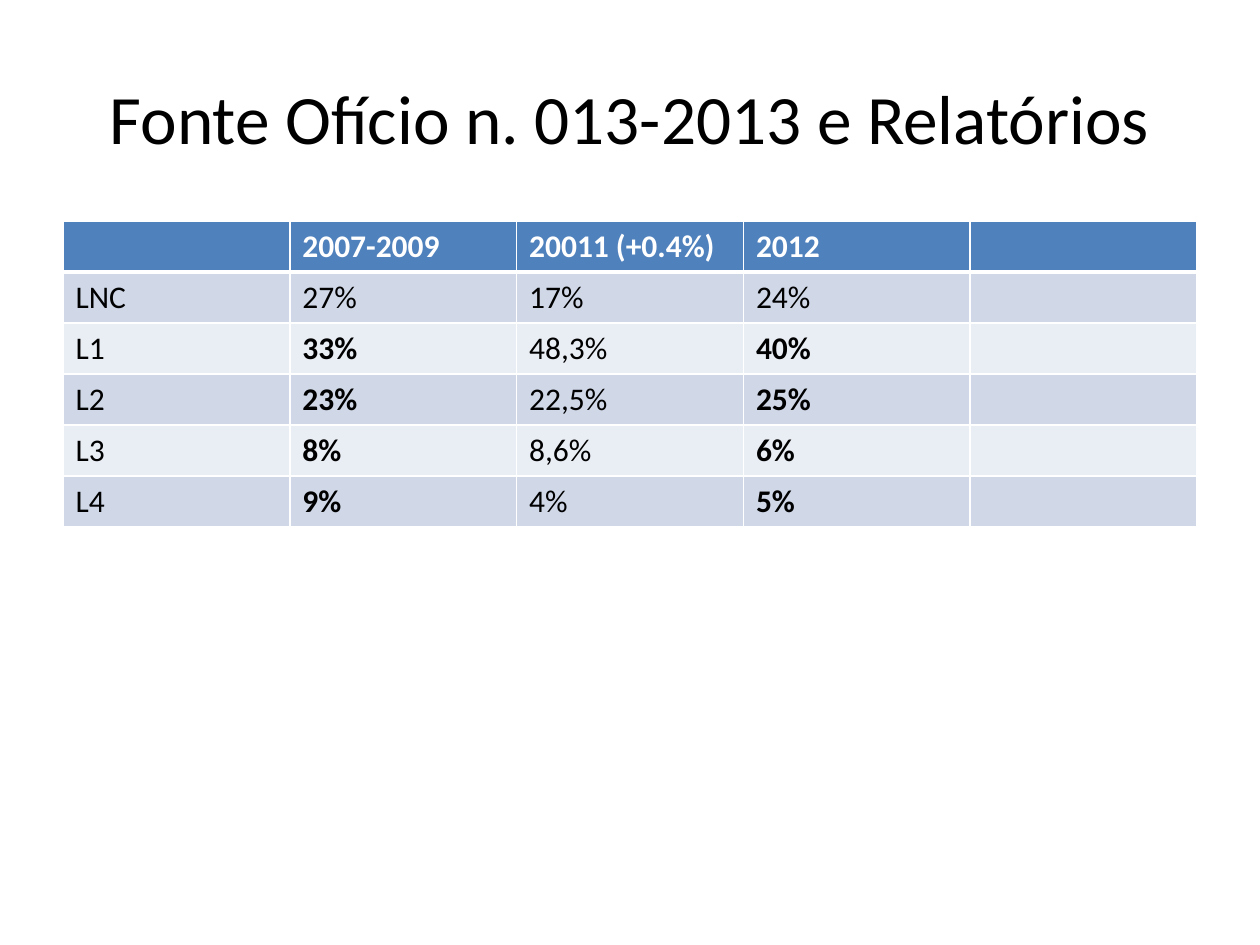
from dataclasses import dataclass

from lxml.etree import SubElement
from pptx import Presentation
from pptx.dml.color import RGBColor as RGB
from pptx.enum.text import MSO_ANCHOR as Anchor, PP_ALIGN as Align
from pptx.oxml.ns import qn
from pptx.util import Pt

EMU_PER_PX = 914400 / 126


@dataclass(frozen=True)
class Theme:
    font: str = "Calibri"
    title_size: float = 39.6
    cell_size: int = 18
    ink: str = "000000"
    white: str = "FFFFFF"
    header: str = "4F81BD"
    bands: tuple = ("D0D8E8", "E9EDF4")
    rule: int = 1
    header_rule: int = 3


theme = Theme()


def px(count):
    return round(count * EMU_PER_PX)


def style_runs(para, size, color, bold=False):
    for span in para.runs:
        span.font.name = theme.font
        span.font.size = Pt(size)
        span.font.bold = bold
        span.font.color.rgb = RGB.from_string(color)


deck = Presentation()
deck.slide_width, deck.slide_height = px(1260), px(945)
page = deck.slides.add_slide(deck.slide_layouts[6])

# Title
title = page.shapes.add_textbox(px(63), px(38), px(1134), px(157)).text_frame
title.word_wrap = True
title.vertical_anchor = Anchor.MIDDLE
title.text = "Fonte Ofício n. 013-2013 e Relatórios"
title.paragraphs[0].alignment = Align.CENTER
style_runs(title.paragraphs[0], theme.title_size, theme.ink)

# Percentages by level and period; the last column is empty
rows = [
    ("", "2007-2009", "20011 (+0.4%)", "2012", ""),
    ("LNC", "27%", "17%", "24%", ""),
    ("L1", "33%", "48,3%", "40%", ""),
    ("L2", "23%", "22,5%", "25%", ""),
    ("L3", "8%", "8,6%", "6%", ""),
    ("L4", "9%", "4%", "5%", ""),
]
bold_columns = (1, 3)
row_height = 51

table = page.shapes.add_table(
    len(rows), len(rows[0]), px(63), px(221), px(1134), px(row_height * len(rows))
).table

for r, values in enumerate(rows):
    table.rows[r].height = px(row_height)
    is_header = r == 0
    fill = theme.header if is_header else theme.bands[(r - 1) % 2]
    color = theme.white if is_header else theme.ink
    widths = {
        "a:lnL": theme.rule,
        "a:lnR": theme.rule,
        "a:lnT": theme.header_rule if r == 1 else theme.rule,
        "a:lnB": theme.header_rule if is_header else theme.rule,
    }
    for c, value in enumerate(values):
        cell = table.cell(r, c)
        cell.text = value
        bold = is_header or (r > 1 and c in bold_columns)
        style_runs(cell.text_frame.paragraphs[0], theme.cell_size, color, bold)

        # Borders must come before the fill in the cell properties
        properties = cell._tc.get_or_add_tcPr()
        for tag, width in widths.items():
            line = SubElement(properties, qn(tag), w=str(Pt(width)))
            solid = SubElement(line, qn("a:solidFill"))
            SubElement(solid, qn("a:srgbClr"), val=theme.white)
        cell.fill.solid()
        cell.fill.fore_color.rgb = RGB.from_string(fill)

deck.save("out.pptx")
